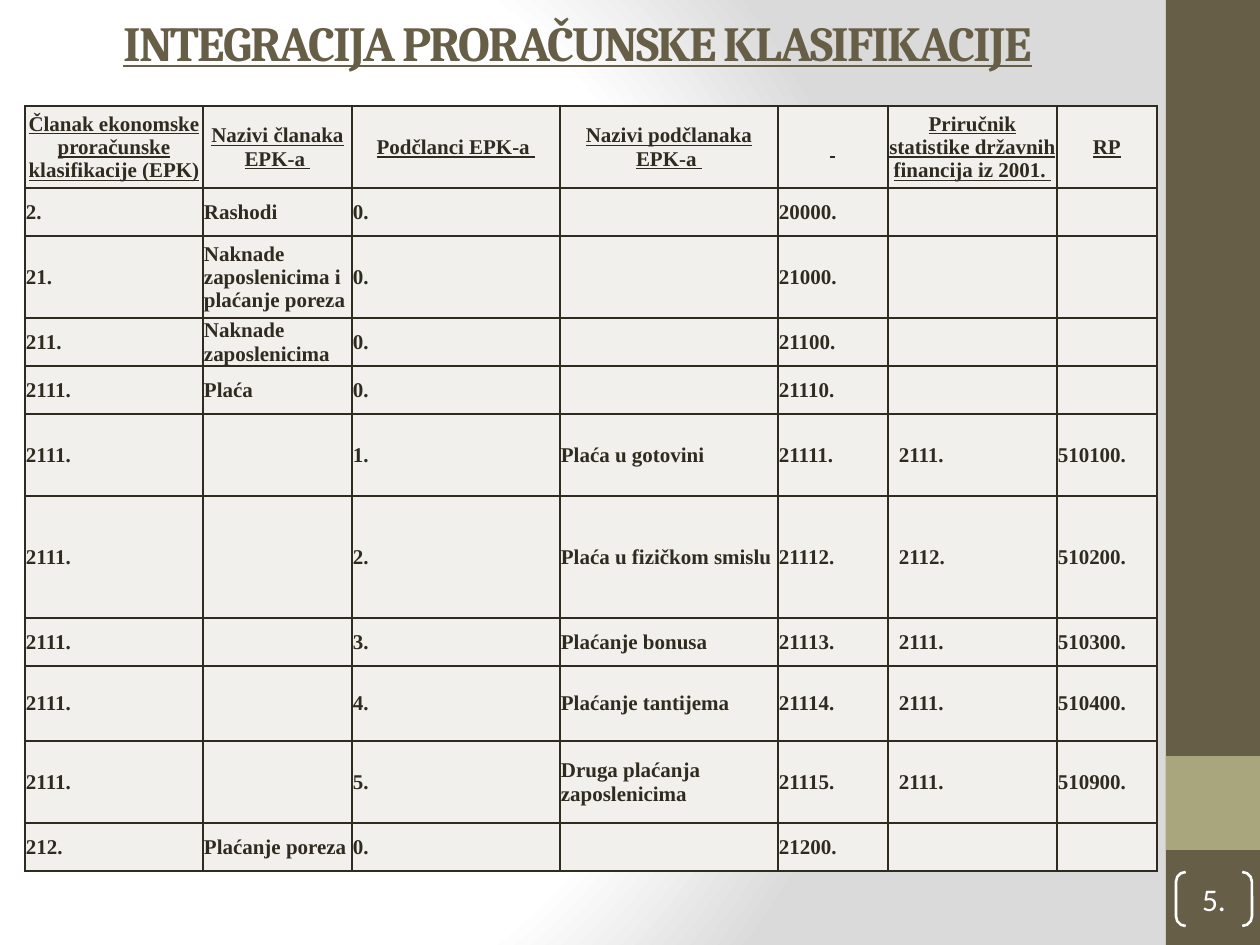
"""Build the slide on integrating the budget classification."""
from pptx import Presentation
from pptx.dml.color import RGBColor
from pptx.enum.shapes import MSO_SHAPE
from pptx.enum.text import MSO_ANCHOR, PP_ALIGN
from pptx.oxml import parse_xml
from pptx.oxml.ns import nsdecls
from pptx.util import Emu, Pt

RECT, BRACKET = MSO_SHAPE.RECTANGLE, MSO_SHAPE.DOUBLE_BRACKET
MIDDLE = MSO_ANCHOR.MIDDLE
CENTER, LEFT = PP_ALIGN.CENTER, PP_ALIGN.LEFT
SCALE = 914400 / 126


class Theme:
    dark = "675E47"
    olive = "A9A57C"
    ink = "2F2B20"
    cell = "F1F0EC"
    white = "FFFFFF"
    gray = "DADADA"
    title = {"name": "Cambria", "size": Pt(28), "bold": True, "underline": True}
    head = {"name": "Times New Roman", "size": Pt(12), "bold": True, "underline": True}
    body = {**head, "underline": False}
    page = {"name": "Calibri", "size": Pt(18)}


def px(*nums):
    return [Emu(round(n * SCALE)) for n in nums]


def write(frame, text, style, color, align):
    para = frame.paragraphs[0]
    para.alignment = align
    run = para.add_run()
    run.text = text
    for key, value in style.items():
        setattr(run.font, key, value)
    run.font.color.rgb = RGBColor.from_string(color)
    return run


deck = Presentation()
deck.slide_width, deck.slide_height = px(1260, 945)
slide = deck.slides.add_slide(deck.slide_layouts[5])

stops = "".join(
    f'<a:gs pos="{pos}000"><a:srgbClr val="{color}"/></a:gs>'
    for pos, color in ((0, Theme.white), (75, Theme.white), (100, Theme.gray))
)
slide.element.cSld.insert(0, parse_xml(
    f'<p:bg {nsdecls("p", "a")}><p:bgPr><a:gradFill rotWithShape="1"><a:gsLst>{stops}</a:gsLst>'
    '<a:path path="circle"><a:fillToRect l="20000" t="50000" r="100000" b="50000"/></a:path>'
    '</a:gradFill><a:effectLst/></p:bgPr></p:bg>'
))

for box, color in (((1166, 0, 94, 945), Theme.dark), ((1166, 756, 94, 94), Theme.olive)):
    band = slide.shapes.add_shape(RECT, *px(*box))
    band.shadow.inherit = False
    band.fill.solid()
    band.fill.fore_color.rgb = RGBColor.from_string(color)
    band.line.fill.background()

title = slide.shapes.title
title.left, title.top, title.width, title.height = px(0, 3, 1155, 77)
title.text_frame.vertical_anchor = MIDDLE
run = write(title.text_frame, "INTEGRACIJA PRORAČUNSKE KLASIFIKACIJE", Theme.title, Theme.dark, CENTER)
run.font._element.set("spc", "-100")

page = slide.shapes.add_shape(BRACKET, *px(1176, 872, 76, 54))
page.adjustments[0] = 0.18
page.shadow.inherit = False
page.fill.background()
page.line.color.rgb = RGBColor.from_string(Theme.white)
page.line.width = Pt(1.5)
label = page.text_frame
label.vertical_anchor = MIDDLE
for side in ("left", "top", "right", "bottom"):
    setattr(label, f"margin_{side}", 0)
write(label, "5.", Theme.page, Theme.white, CENTER)

COLS = (178, 149, 208, 218, 110, 169, 100)
ROWS = (82, 48, 82, 48, 48, 82, 122, 48, 75, 82, 48)
DATA = (
    ("Članak ekonomske proračunske klasifikacije (EPK) ", "Nazivi članaka EPK-a ", "Podčlanci EPK-a ",
     "Nazivi podčlanaka EPK-a ", " ", "Priručnik statistike državnih financija iz 2001. ", "RP"),
    ("2.", "Rashodi", "0.", "", "20000.", "", ""),
    ("21.", "Naknade zaposlenicima i plaćanje poreza", "0.", "", "21000.", "", ""),
    ("211.", "Naknade zaposlenicima", "0.", "", "21100.", "", ""),
    ("2111.", "Plaća", "0.", "", "21110.", "", ""),
    ("2111.", "", "1.", "Plaća u gotovini", "21111.", "2111.", "510100."),
    ("2111.", "", "2.", "Plaća u fizičkom smislu", "21112.", "2112.", "510200."),
    ("2111.", "", "3.", "Plaćanje bonusa", "21113.", "2111.", "510300."),
    ("2111.", "", "4.", "Plaćanje tantijema", "21114.", "2111.", "510400."),
    ("2111.", "", "5.", "Druga plaćanja zaposlenicima", "21115.", "2111.", "510900."),
    ("212.", "Plaćanje poreza", "0.", "", "21200.", "", ""),
)
grid = slide.shapes.add_table(len(ROWS), len(COLS), *px(25, 106, sum(COLS), sum(ROWS))).table
for col, width in zip(grid.columns, px(*COLS)):
    col.width = width
for row, height in zip(grid.rows, px(*ROWS)):
    row.height = height

for r, line in enumerate(DATA):
    style, align = (Theme.head, CENTER) if r == 0 else (Theme.body, LEFT)
    for c, text in enumerate(line):
        cell = grid.cell(r, c)
        cell.vertical_anchor = MIDDLE
        inset = 11 if r and c == 5 else 1
        for side, gap in zip(("left", "top", "right", "bottom"), px(inset, 1, 1, 0)):
            setattr(cell, f"margin_{side}", gap)
        cell.fill.solid()
        cell.fill.fore_color.rgb = RGBColor.from_string(Theme.cell)
        if text:
            write(cell.text_frame, text, style, Theme.ink, align)
        else:
            cell.text_frame.paragraphs[0].font.size = style["size"]
        for i, edge in enumerate("LRTB"):
            cell._tc.tcPr.insert(i, parse_xml(
                f'<a:ln{edge} {nsdecls("a")} w="12700"><a:solidFill>'
                f'<a:srgbClr val="{Theme.ink}"/></a:solidFill></a:ln{edge}>'
            ))

deck.save("out.pptx")
